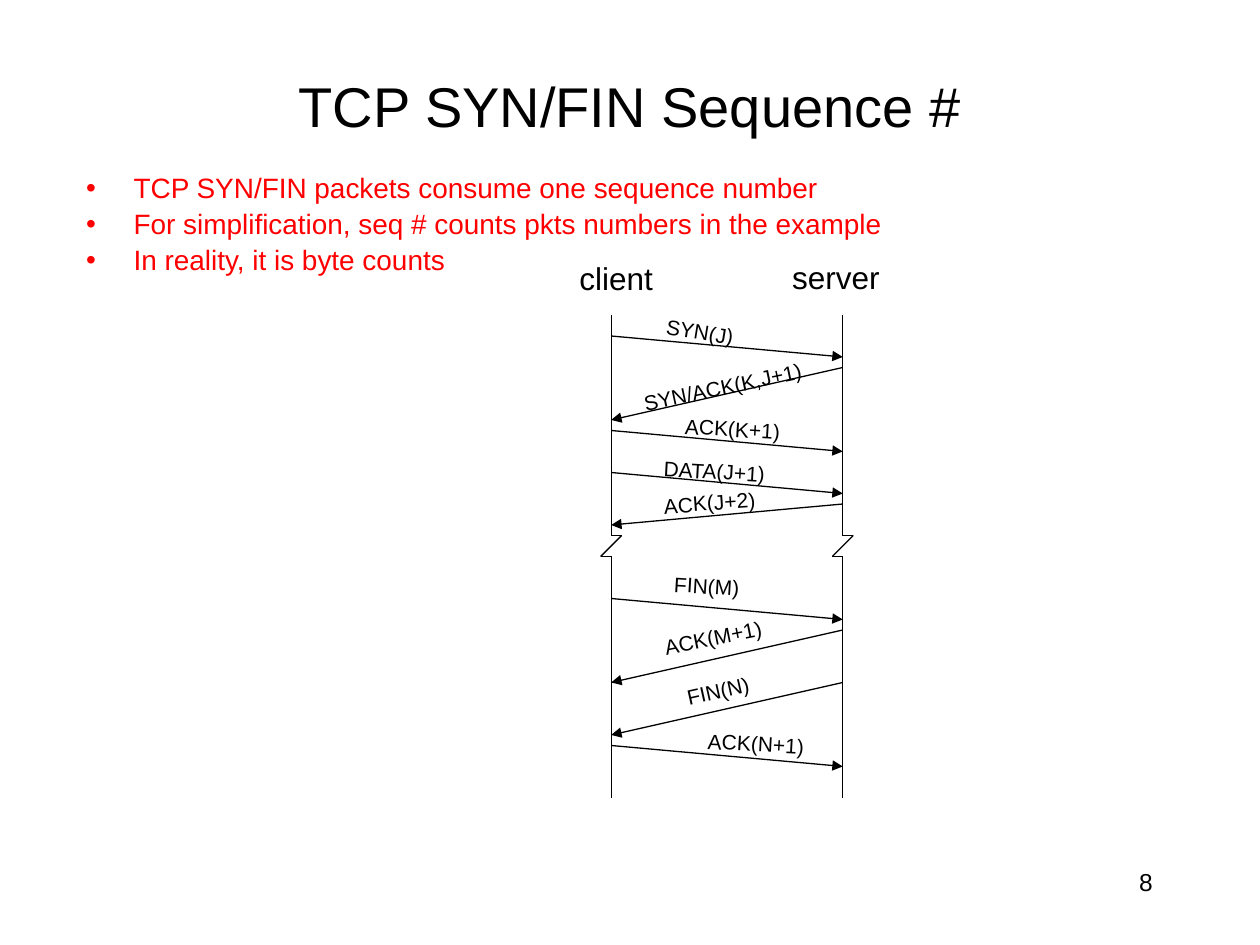
from lxml.etree import SubElement
from pptx import Presentation
from pptx.dml.color import RGBColor
from pptx.enum.shapes import MSO_CONNECTOR
from pptx.enum.text import MSO_ANCHOR, MSO_AUTO_SIZE, PP_ALIGN
from pptx.oxml.ns import qn
from pptx.util import Cm, Pt

COLORS = {"ink": "000000", "accent": "FF0000"}
STEP = 2.54 / 12
CLIENT, SERVER = 12.32, 16.99
TOP, BREAK_TOP, BREAK_BOTTOM, BOTTOM = (STEP * n for n in (30, 51, 53, 76))

BULLETS = [
    "TCP SYN/FIN packets consume one sequence number",
    "For simplification, seq # counts pkts numbers in the example",
    "In reality, it is byte counts",
]

# text, sender, receiver, start step, steps down, label left, top, width, rotation
MESSAGES = [
    ("SYN(J)", CLIENT, SERVER, 32, 2, 13.18, 6.3, 1.88, 9.2),
    ("SYN/ACK(K,J+1)", SERVER, CLIENT, 35, 5, 12.7, 7.42, 3.73, 348),
    ("ACK(K+1)", CLIENT, SERVER, 41, 2, 13.56, 8.26, 2.41, 3.4),
    ("DATA(J+1)", CLIENT, SERVER, 45, 2, 13.13, 9.12, 2.62, 3.4),
    ("ACK(J+2)", SERVER, CLIENT, 48, 2, 13.13, 9.75, 2.36, 355.9),
    ("FIN(M)", CLIENT, SERVER, 57, 2, 13.34, 11.43, 1.83, 3.5),
    ("ACK(M+1)", SERVER, CLIENT, 60, 5, 13.13, 12.47, 2.49, 348.6),
    ("FIN(N)", SERVER, CLIENT, 65, 5, 13.59, 13.54, 1.78, 347.4),
    ("ACK(N+1)", CLIENT, SERVER, 71, 2, 14.02, 14.61, 2.44, 3.2),
]


def write(paragraph, text, size=12, color="ink", align=PP_ALIGN.LEFT):
    paragraph.alignment = align
    span = paragraph.add_run()
    span.text = text
    span.font.name = "Arial"
    span.font.size = Pt(size)
    span.font.color.rgb = RGBColor.from_string(COLORS[color])


class Page:
    def __init__(self, deck):
        self.slide = deck.slides.add_slide(deck.slide_layouts[1])
        self.shapes = self.slide.shapes

    def place(self, box, left, top, width, height):
        box.left, box.top = Cm(left), Cm(top)
        box.width, box.height = Cm(width), Cm(height)
        box.text_frame.auto_size = MSO_AUTO_SIZE.NONE

    def title(self, text, *area):
        box = self.shapes.title
        self.place(box, *area)
        box.text_frame.vertical_anchor = MSO_ANCHOR.MIDDLE
        write(box.text_frame.paragraphs[0], text, size=32, align=PP_ALIGN.CENTER)

    def bullets(self, lines, *area):
        box = self.slide.placeholders[1]
        self.place(box, *area)
        frame = box.text_frame
        for index, line in enumerate(lines):
            paragraph = frame.add_paragraph() if index else frame.paragraphs[0]
            properties = paragraph._p.get_or_add_pPr()
            properties.set("marL", str(Cm(0.96)))
            properties.set("indent", str(-Cm(0.96)))
            SubElement(properties, qn("a:buChar"), char="•")
            paragraph.line_spacing = 0.9
            paragraph.space_before = Pt(3.2 if index else 0)
            write(paragraph, line, size=16, color="accent")

    def label(self, text, left, top, width, height=0.76, rotation=0, **style):
        box = self.shapes.add_textbox(Cm(left), Cm(top), Cm(width), Cm(height))
        box.rotation = rotation
        box.text_frame.word_wrap = False
        box.text_frame.auto_size = MSO_AUTO_SIZE.NONE
        box.text_frame.margin_right = 0
        write(box.text_frame.paragraphs[0], text, **style)

    def number(self, text, *area):
        box = self.shapes.add_textbox(*map(Cm, area))
        box.text_frame.word_wrap = True
        write(box.text_frame.paragraphs[0], text, size=14, align=PP_ALIGN.RIGHT)

    def line(self, x1, y1, x2, y2, arrow=False):
        connector = self.shapes.add_connector(
            MSO_CONNECTOR.STRAIGHT, Cm(x1), Cm(y1), Cm(x2), Cm(y2))
        connector.line.width = Pt(0.75)
        connector.line.color.rgb = RGBColor.from_string(COLORS["ink"])
        if arrow:
            SubElement(connector.line._get_or_add_ln(), qn("a:tailEnd"), type="triangle")
        SubElement(connector._element.spPr, qn("a:effectLst"))

    def lifeline(self, x):
        points = [(x, TOP), (x, BREAK_TOP), (x + STEP, BREAK_TOP),
                  (x - STEP, BREAK_BOTTOM), (x, BREAK_BOTTOM), (x, BOTTOM)]
        for start, end in zip(points, points[1:]):
            self.line(*start, *end)


def main():
    deck = Presentation()
    deck.slide_width, deck.slide_height = Cm(25.4), Cm(19.05)
    page = Page(deck)
    page.title("TCP SYN/FIN Sequence #", 1.9, 1.06, 21.6, 2.12)
    page.bullets(BULLETS, 1.48, 3.39, 21.6, 2.96)
    page.number("8", 18.2, 17.36, 5.29, 1.27)

    page.label("client", 11.43, 5.09, 1.98, 1.02, size=18)
    page.label("server", 15.72, 5.08, 2.29, 1.02, size=18)
    for x in (CLIENT, SERVER):
        page.lifeline(x)
    for text, sender, receiver, start, drop, left, top, width, rotation in MESSAGES:
        page.line(sender, STEP * start, receiver, STEP * (start + drop), arrow=True)
        page.label(text, left, top, width, rotation=rotation)
    deck.save("out.pptx")


if __name__ == "__main__":
    main()
